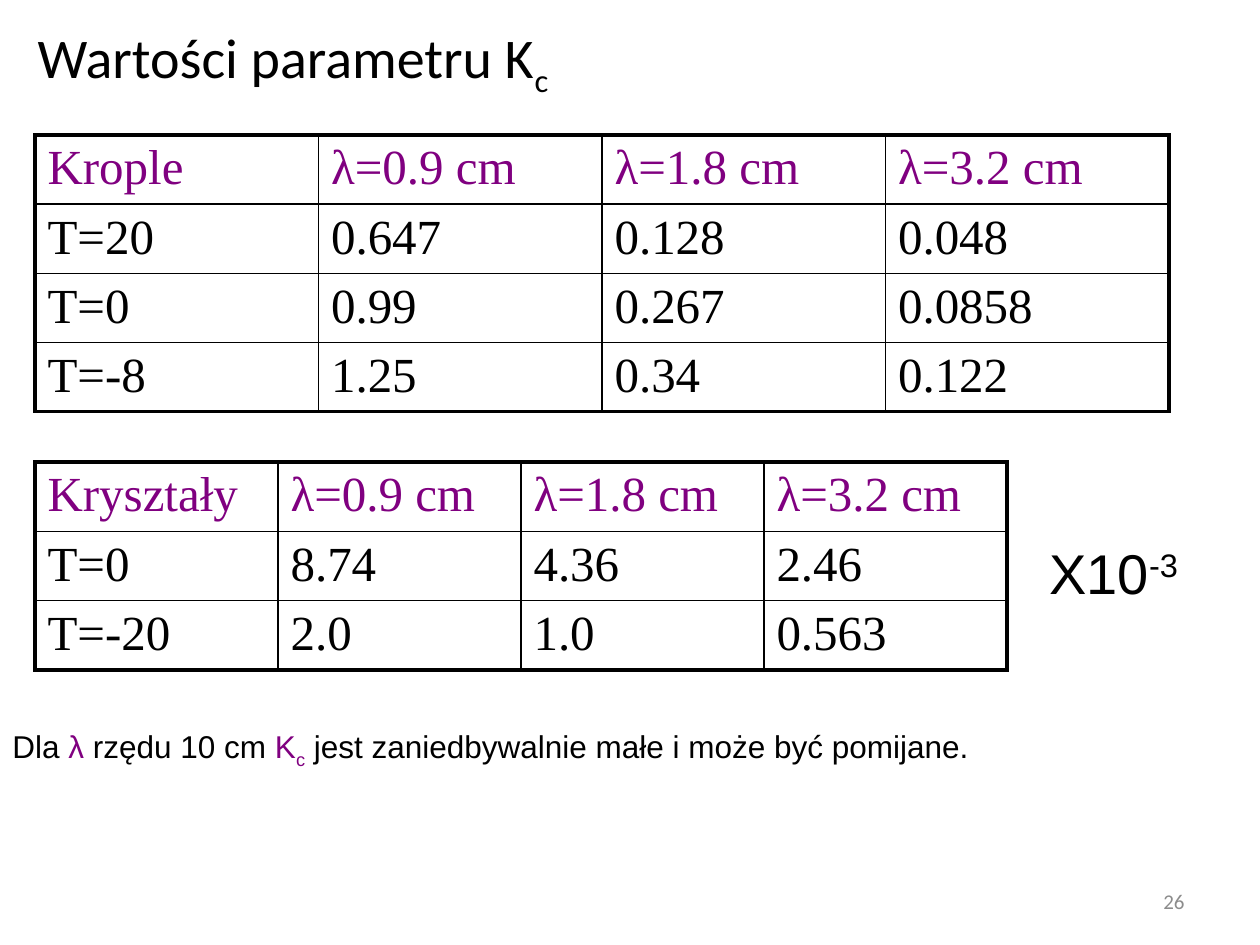
from dataclasses import dataclass

from lxml import etree
from pptx import Presentation
from pptx.dml.color import RGBColor
from pptx.enum.text import MSO_ANCHOR, MSO_AUTO_SIZE, PP_ALIGN
from pptx.oxml.ns import qn
from pptx.util import Inches, Pt

LEFT, RIGHT = PP_ALIGN.LEFT, PP_ALIGN.RIGHT
TOP, MIDDLE = MSO_ANCHOR.TOP, MSO_ANCHOR.MIDDLE
NO_AUTOFIT = MSO_AUTO_SIZE.NONE
TITLE_ONLY = 5
PX_PER_INCH = 126


@dataclass(frozen=True)
class Theme:
    ink: str = "000000"
    accent: str = "800080"
    muted: str = "8C8C8C"
    title_font: str = "Calibri"
    body_font: str = "Arial"
    table_font: str = "Times New Roman"
    large: int = 32
    table: int = 28
    note: int = 18
    number: int = 12
    outer_line: float = 2.25
    inner_line: float = 1


THEME = Theme()
DROPLETS = [
    ["Krople", "λ=0.9 cm", "λ=1.8 cm", "λ=3.2 cm"],
    ["T=20", "0.647", "0.128", "0.048"],
    ["T=0", "0.99", "0.267", "0.0858"],
    ["T=-8", "1.25", "0.34", "0.122"],
]
CRYSTALS = [
    ["Kryształy", "λ=0.9 cm", "λ=1.8 cm", "λ=3.2 cm"],
    ["T=0", "8.74", "4.36", "2.46"],
    ["T=-20", "2.0", "1.0", "0.563"],
]


def px(length):
    return Inches(length / PX_PER_INCH)


def add_span(para, text, *, size, font, color=THEME.ink, baseline=0):
    span = para.add_run()
    span.text = text
    span.font.size = Pt(size)
    span.font.name = font
    span.font.color.rgb = RGBColor.from_string(color)
    if baseline:
        span._r.get_or_add_rPr().set("baseline", str(baseline * 1000))


def fill_frame(frame, spans, *, align=LEFT, anchor=TOP, **style):
    """Write (text, overrides) spans into the first paragraph of a frame."""
    frame.word_wrap = True
    frame.auto_size = NO_AUTOFIT
    frame.vertical_anchor = anchor
    para = frame.paragraphs[0]
    para.alignment = align
    for text, overrides in spans:
        add_span(para, text, **{**style, **overrides})


def add_title(page, box, spans):
    title = page.shapes.title
    title.left, title.top, title.width, title.height = map(px, box)
    fill_frame(title.text_frame, spans, size=THEME.large, font=THEME.title_font)


def add_text(page, box, spans, **style):
    label = page.shapes.add_textbox(*map(px, box))
    fill_frame(label.text_frame, spans, **style)


def set_border(cell, side, width):
    line = etree.SubElement(cell._tc.get_or_add_tcPr(), qn(f"a:ln{side}"), w=str(Pt(width)))
    fill = etree.SubElement(line, qn("a:solidFill"))
    etree.SubElement(fill, qn("a:srgbClr"), val=THEME.ink)


def add_grid(page, box, rows):
    """Table with equal columns and rows, a heavy frame and thin inner lines."""
    last_row, last_column = len(rows) - 1, len(rows[0]) - 1
    left, top, width, height = map(px, box)
    table = page.shapes.add_table(len(rows), len(rows[0]), left, top, width, height).table
    table.first_row = table.horz_banding = False
    for r, values in enumerate(rows):
        for c, value in enumerate(values):
            cell = table.cell(r, c)
            on_frame = {"L": c == 0, "R": c == last_column, "T": r == 0, "B": r == last_row}
            for side, outer in on_frame.items():
                set_border(cell, side, THEME.outer_line if outer else THEME.inner_line)
            cell.fill.background()
            add_span(cell.text_frame.paragraphs[0], value, size=THEME.table,
                     font=THEME.table_font, color=THEME.ink if r else THEME.accent)


def build_page(deck):
    page = deck.slides.add_slide(deck.slide_layouts[TITLE_ONLY])
    add_title(page, (25, 16, 1201, 81),
              [("Wartości parametru K", {}), ("c", {"baseline": -25})])

    # Parameter tables
    add_grid(page, (35, 135, 1134, 277), DROPLETS)
    add_grid(page, (35, 462, 972, 208), CRYSTALS)

    # Multiplier of the crystal table
    add_text(page, (1037, 532, 223, 79), [("X10", {}), ("-3", {"baseline": 30})],
             size=THEME.large, font=THEME.body_font)

    # Closing remark
    accent = {"color": THEME.accent}
    remark = [
        ("Dla ", {}), ("λ", accent), (" rzędu 10 cm ", {}), ("K", accent),
        ("c", {**accent, "baseline": -25}),
        (" jest zaniedbywalnie małe i może być pomijane.", {}),
    ]
    add_text(page, (0, 721, 1186, 113), remark, size=THEME.note, font=THEME.body_font)

    # Page number
    add_text(page, (903, 876, 294, 50), [("26", {})], align=RIGHT, anchor=MIDDLE,
             size=THEME.number, font=THEME.title_font, color=THEME.muted)


def main():
    deck = Presentation()
    deck.slide_width, deck.slide_height = px(1260), px(945)
    build_page(deck)
    deck.save("out.pptx")


if __name__ == "__main__":
    main()
